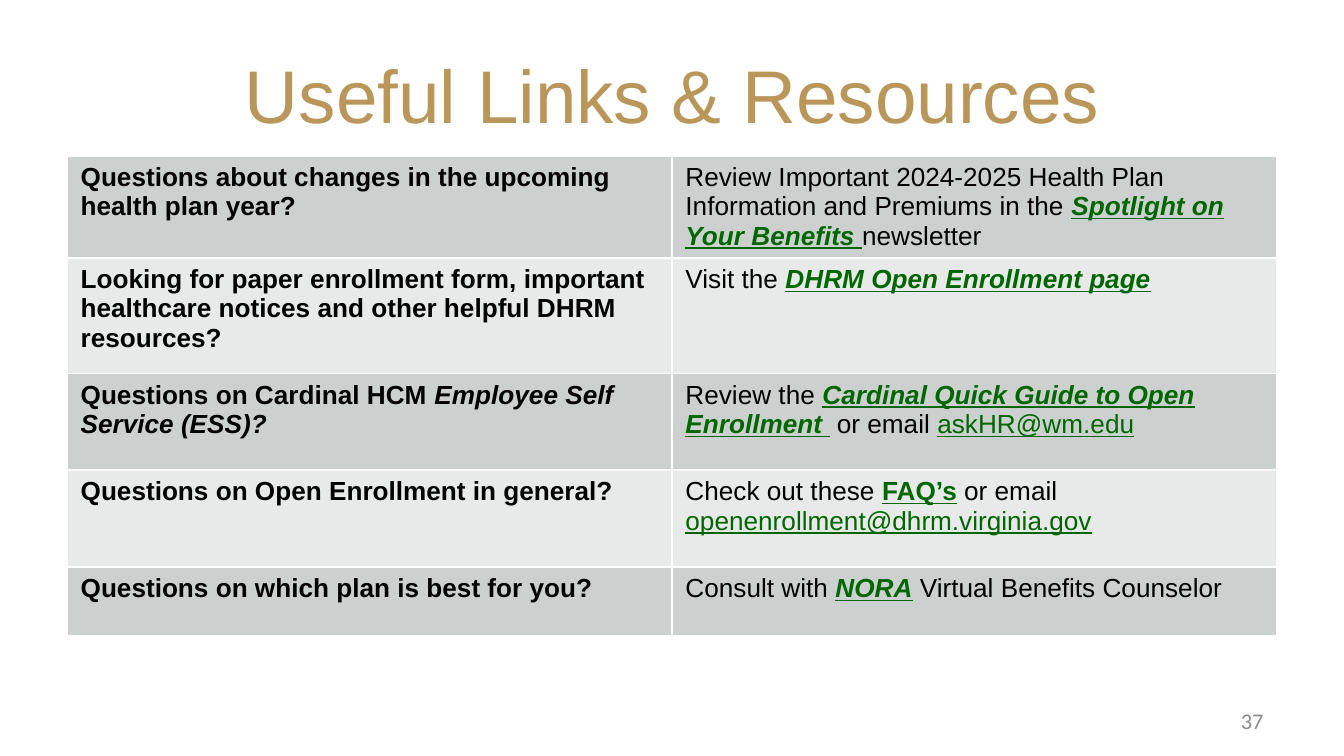
from typing import NamedTuple

from pptx import Presentation
from pptx.dml.color import RGBColor
from pptx.enum import text as t
from pptx.util import Inches, Pt

GOLD = RGBColor(0xB9, 0x97, 0x5B)
BLACK = RGBColor(0, 0, 0)
LINK_GREEN = RGBColor(0, 0x66, 0)
NUMBER_GREY = RGBColor(0x8C, 0x8C, 0x8C)
BAND_COLOURS = (RGBColor(0xCC, 0xD1, 0xCF), RGBColor(0xE7, 0xEA, 0xE8))


class Span(NamedTuple):
    text: str
    bold: bool = False
    italic: bool = False
    link: bool = False


class Resource(NamedTuple):
    question: list[Span]
    answer: list[Span]
    height: float


def strong(text: str, italic: bool = False) -> Span:
    return Span(text, bold=True, italic=italic)


def link(text: str, bold: bool = True, italic: bool = True) -> Span:
    return Span(text, bold, italic, link=True)


RESOURCES = [
    Resource(
        [strong("Questions about changes in the upcoming health plan year?")],
        [Span("Review Important 2024-2025 Health Plan Information and Premiums in the "),
         link("Spotlight on Your Benefits "), Span("newsletter")],
        0.76),
    Resource(
        [strong("Looking for paper enrollment form, important healthcare notices "
                "and other helpful DHRM resources?")],
        [Span("Visit the "), link("DHRM Open Enrollment page")],
        0.86),
    Resource(
        [strong("Questions on Cardinal HCM "),
         strong("Employee Self Service (ESS)?", italic=True)],
        [Span("Review the "), link("Cardinal Quick Guide to Open Enrollment "),
         Span(" or email "), link("askHR@wm.edu", bold=False, italic=False)],
        0.72),
    Resource(
        [strong("Questions on Open Enrollment in general?")],
        [Span("Check out these "), link("FAQ’s", italic=False), Span(" or email "),
         link("openenrollment@dhrm.virginia.gov", bold=False, italic=False)],
        0.72),
    Resource(
        [strong("Questions on which plan is best for you?")],
        [Span("Consult with "), link("NORA"), Span(" Virtual Benefits Counselor")],
        0.51),
]


def place(shape, left: float, top: float, width: float, height: float) -> None:
    shape.left, shape.top = Inches(left), Inches(top)
    shape.width, shape.height = Inches(width), Inches(height)


def format_line(shape, text: str, font_name: str, size: int, colour: RGBColor,
                alignment: t.PP_ALIGN) -> None:
    """Fill a shape with one vertically centred line of text."""
    frame = shape.text_frame
    frame.text = text
    frame.word_wrap = True
    frame.vertical_anchor = t.MSO_ANCHOR.MIDDLE
    paragraph = frame.paragraphs[0]
    paragraph.alignment = alignment
    font = paragraph.runs[0].font
    font.name, font.size = font_name, Pt(size)
    font.color.rgb = colour


def fill_cell(cell, spans: list[Span], colour: RGBColor) -> None:
    cell.fill.solid()
    cell.fill.fore_color.rgb = colour
    paragraph = cell.text_frame.paragraphs[0]
    for span in spans:
        run = paragraph.add_run()
        run.text = span.text
        font = run.font
        font.name, font.size = "Arial", Pt(14)
        font.bold, font.italic, font.underline = span.bold, span.italic, span.link
        font.color.rgb = LINK_GREEN if span.link else BLACK


def add_resource_table(slide, resources: list[Resource]) -> None:
    total_height = sum(resource.height for resource in resources)
    table = slide.shapes.add_table(len(resources), 2, Inches(0.5), Inches(1.16),
                                   Inches(9), Inches(total_height)).table
    table.first_row = False
    table.horz_banding = False
    for index, resource in enumerate(resources):
        table.rows[index].height = Inches(resource.height)
        colour = BAND_COLOURS[index % 2]
        fill_cell(table.cell(index, 0), resource.question, colour)
        fill_cell(table.cell(index, 1), resource.answer, colour)


def main() -> None:
    presentation = Presentation()
    presentation.slide_width = Inches(10)
    presentation.slide_height = presentation.slide_width * 9 // 16
    slide = presentation.slides.add_slide(presentation.slide_layouts[5])

    title = slide.shapes.title
    place(title, 0.5, 0.23, 9, 0.94)
    format_line(title, "Useful Links & Resources", "Arial", 40, GOLD, t.PP_ALIGN.CENTER)

    add_resource_table(slide, RESOURCES)

    page_number = slide.shapes.add_textbox(
        Inches(7.17), Inches(5.21), Inches(2.33), Inches(0.3))
    format_line(page_number, "37", "Calibri", 12, NUMBER_GREY, t.PP_ALIGN.RIGHT)

    presentation.save("out.pptx")


if __name__ == "__main__":
    main()
